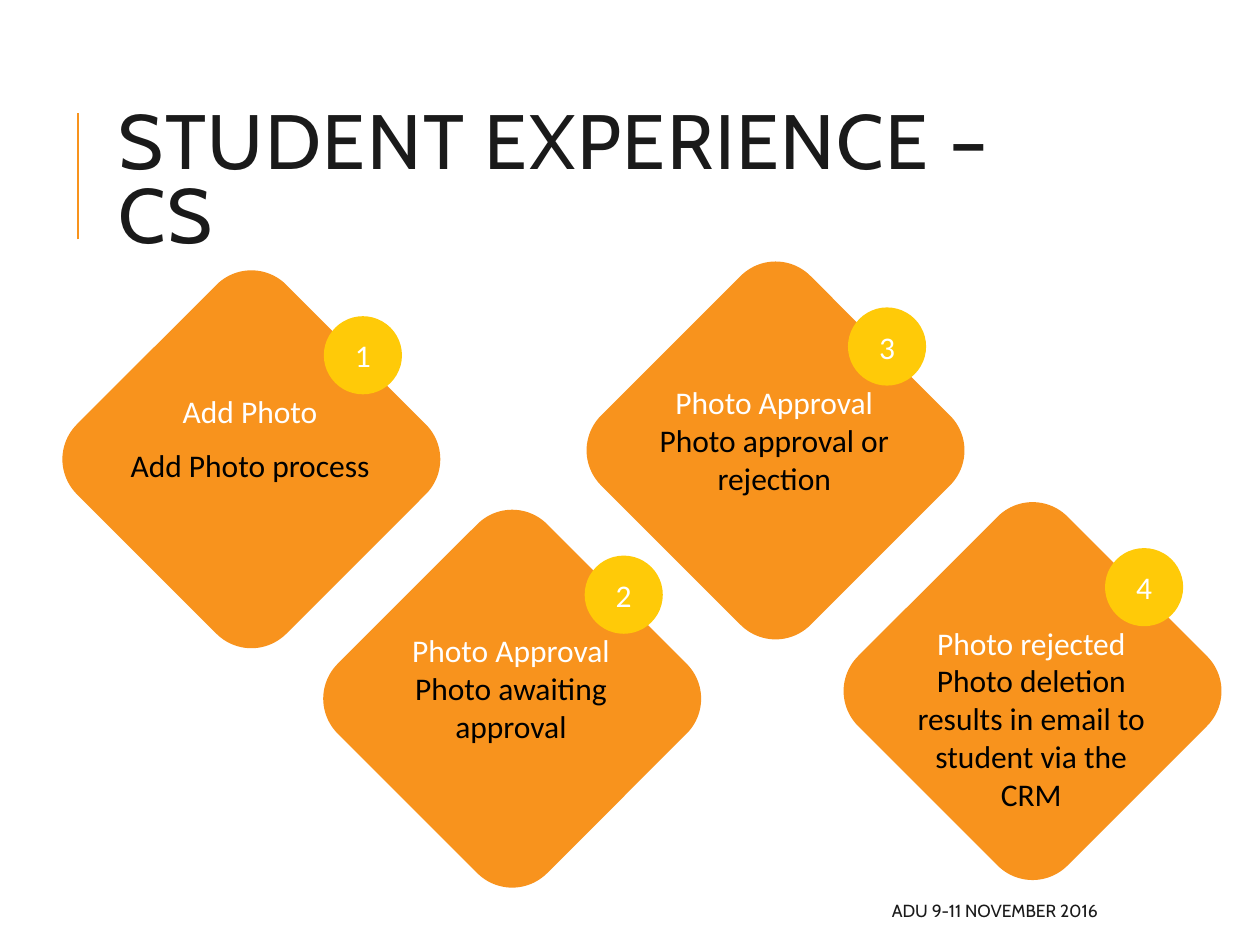
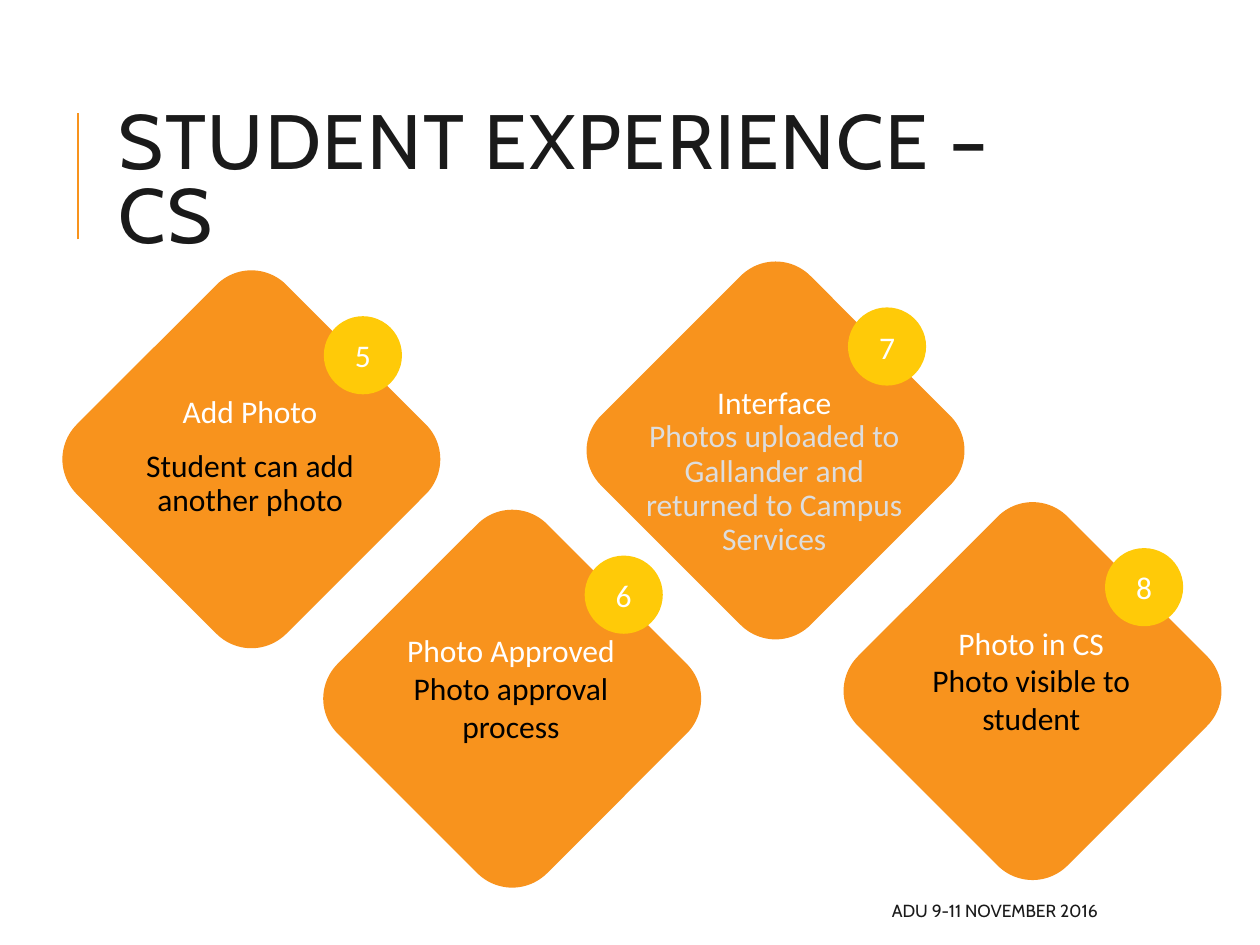
from collections import namedtuple

from lxml import etree
from pptx import Presentation
from pptx import util as u
from pptx.dml.color import RGBColor
from pptx.enum import shapes, text
from pptx.oxml.ns import qn

ORANGE = RGBColor(0xF8, 0x93, 0x1D)
YELLOW = RGBColor(0xFF, 0xCA, 0x08)
INK = RGBColor(0x1A, 0x1A, 0x1A)
BLACK = RGBColor(0, 0, 0)
WHITE = RGBColor(0xFF, 0xFF, 0xFF)
PALE = RGBColor(0xDD, 0xDD, 0xDD)
HEAD_FONT, BODY_FONT = "Cabin", "Calibri"

TITLE = "STUDENT EXPERIENCE – CS"
FOOTER = "ADU 9-11 NOVEMBER 2016"
SLIDE_WIDTH, SLIDE_HEIGHT = 10, 7.5
TITLE_BOX = (0.84, 0.64, 7.97, 1.64)
FOOTER_BOX = (3.97, 7.08, 4.84, 0.3)
RULE_X, RULE_TOP, RULE_BOTTOM = 0.62, 0.9, 1.9

# Four staggered places, used in the same order on both slides
CARD_CORNERS = [(0.82, 2.47), (2.89, 4.37), (4.98, 2.4), (7.02, 4.31)]
CARD_SIDE, BADGE_SIDE, LABEL_WIDTH = 2.35, 0.62, 2.25
LABEL_OFFSET = (0.04, 0.59)
BADGE_OFFSET = (1.75, 0.04)

Step = namedtuple("Step", "heading detail height color line_spacing before after",
                  defaults=(1.01, BLACK, None, 0, 0))

SLIDES = [
    [Step("Add Photo", "Add Photo process", 0.84, BLACK, 0.9, 12, 2),
     Step("Photo Approval", "Photo awaiting approval"),
     Step("Photo Approval", "Photo approval or rejection"),
     Step("Photo rejected",
          "Photo deletion results in email to student via the CRM", 1.31)],
    [Step("Add Photo", "Student can add another photo", 1.12, BLACK, 0.9, 12, 2),
     Step("Photo Approved", "Photo approval process"),
     Step("Interface", "Photos uploaded to Gallander and returned to Campus Services",
          1.49, PALE, 0.9, 0, 14.2),
     Step("Photo in CS", "Photo visible to student")],
]


def inches(*lengths):
    return [u.Inches(length) for length in lengths]


def write(para, words, size, color, font=BODY_FONT, align=text.PP_ALIGN.CENTER):
    para.alignment = align
    span = para.add_run()
    span.text = words
    span.font.size = u.Pt(size)
    span.font.name = font
    span.font.color.rgb = color
    return span


def add_solid(parent, kind, left, top, side, color):
    shape = parent.shapes.add_shape(kind, *inches(left, top, side, side))
    shape.shadow.inherit = False
    shape.fill.solid()
    shape.fill.fore_color.rgb = color
    shape.line.fill.background()
    return shape


def add_title(page):
    title = page.shapes.title
    title.left, title.top, title.width, title.height = inches(*TITLE_BOX)
    frame = title.text_frame
    frame.auto_size = text.MSO_AUTO_SIZE.NONE
    frame.vertical_anchor = text.MSO_ANCHOR.MIDDLE
    para = frame.paragraphs[0]
    para.line_spacing = 0.8
    span = write(para, TITLE, 44, INK, HEAD_FONT, text.PP_ALIGN.LEFT)
    span.font._element.set("spc", "100")


def add_title_rule(page):
    rule = page.shapes.add_connector(
        shapes.MSO_CONNECTOR.STRAIGHT,
        *inches(RULE_X, RULE_BOTTOM, RULE_X, RULE_TOP))
    rule.line.color.rgb = ORANGE
    rule.line.width = u.Pt(1.5)
    etree.SubElement(rule._element.spPr, qn("a:effectLst"))


def add_footer(page):
    frame = page.shapes.add_textbox(*inches(*FOOTER_BOX)).text_frame
    frame.word_wrap = True
    frame.vertical_anchor = text.MSO_ANCHOR.MIDDLE
    write(frame.paragraphs[0], FOOTER, 10, INK, HEAD_FONT, text.PP_ALIGN.RIGHT)


def add_label(group, left, top, step):
    box = group.shapes.add_textbox(*inches(left, top, LABEL_WIDTH, step.height))
    frame = box.text_frame
    frame.word_wrap = True
    frame.auto_size = text.MSO_AUTO_SIZE.SHAPE_TO_FIT_TEXT
    write(frame.paragraphs[0], step.heading, 18, WHITE)
    para = frame.add_paragraph()
    para.line_spacing = step.line_spacing
    para.space_before = u.Pt(step.before)
    para.space_after = u.Pt(step.after)
    write(para, step.detail, 18, step.color)


def add_badge(group, left, top, number):
    badge = add_solid(group, shapes.MSO_SHAPE.OVAL, left, top, BADGE_SIDE, YELLOW)
    badge.text_frame.vertical_anchor = text.MSO_ANCHOR.MIDDLE
    write(badge.text_frame.paragraphs[0], str(number), 18, WHITE)


def add_card(page, left, top, number, step):
    """Group a diamond with its label and its numbered badge."""
    group = page.shapes.add_group_shape()
    diamond = add_solid(group, shapes.MSO_SHAPE.ROUNDED_RECTANGLE,
                        left, top, CARD_SIDE, ORANGE)
    diamond.rotation = 45
    add_label(group, left + LABEL_OFFSET[0], top + LABEL_OFFSET[1], step)
    add_badge(group, left + BADGE_OFFSET[0], top + BADGE_OFFSET[1], number)


def add_steps_slide(deck, first_number, steps):
    page = deck.slides.add_slide(deck.slide_layouts.get_by_name("Title Only"))
    add_title_rule(page)
    add_title(page)
    add_footer(page)
    for number, (corner, step) in enumerate(zip(CARD_CORNERS, steps), first_number):
        add_card(page, *corner, number, step)


def main():
    deck = Presentation()
    deck.slide_width, deck.slide_height = inches(SLIDE_WIDTH, SLIDE_HEIGHT)
    for index, steps in enumerate(SLIDES):
        add_steps_slide(deck, index * len(CARD_CORNERS) + 1, steps)
    deck.save("out.pptx")


if __name__ == "__main__":
    main()
